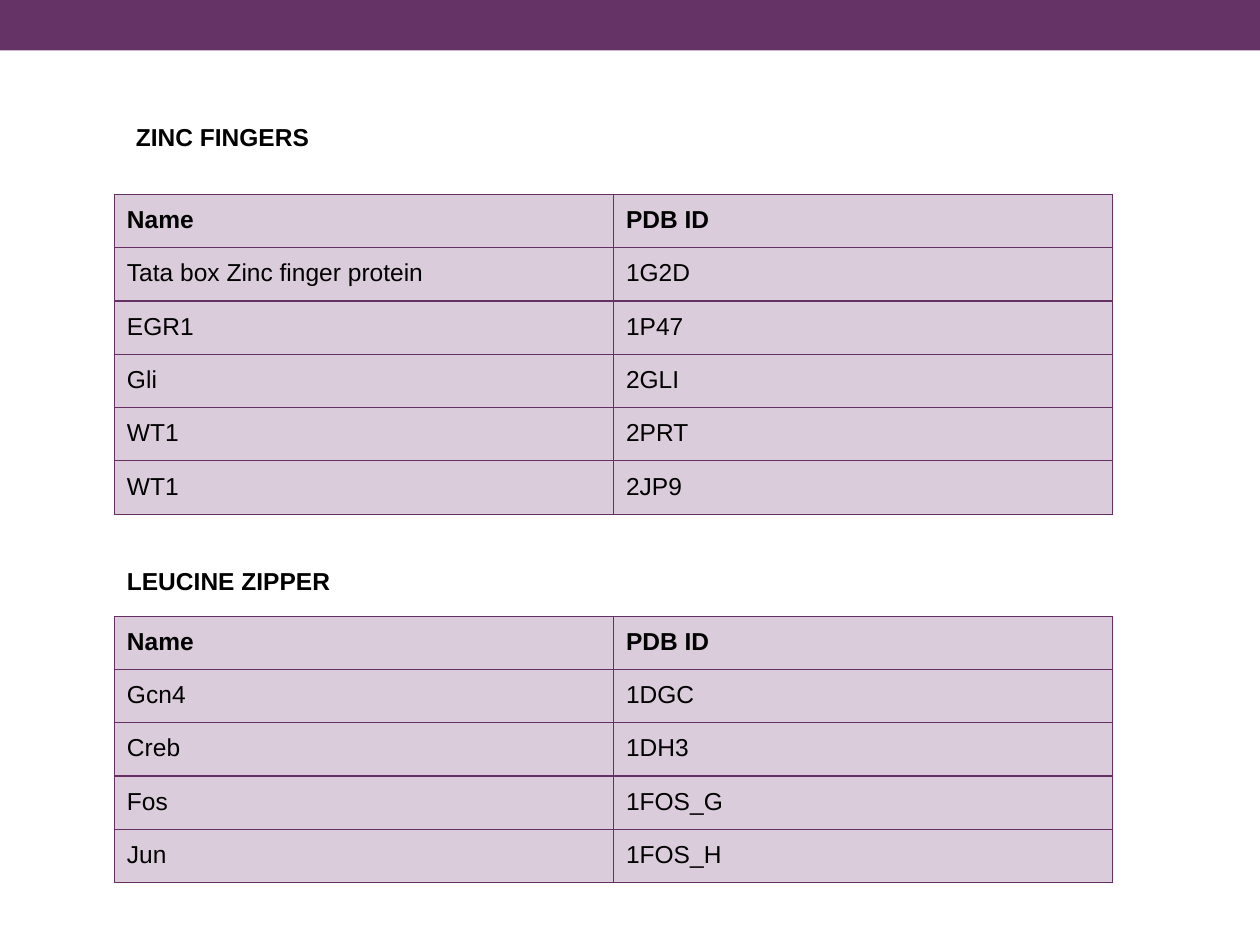
"""Build a slide with two tables of DNA-binding proteins and their PDB IDs."""
from lxml.etree import SubElement
from pptx import Presentation
from pptx.dml.color import RGBColor
from pptx.enum.shapes import MSO_SHAPE as SHAPE
from pptx.enum.text import MSO_ANCHOR as ANCHOR
from pptx.oxml.ns import qn
from pptx.util import Cm, Pt

PURPLE = RGBColor(0x66, 0x33, 0x66)
BORDER = RGBColor(0x65, 0x31, 0x65)
LILAC = RGBColor(0xDA, 0xCC, 0xDA)
BLACK = RGBColor(0, 0, 0)

LEFT, COL_W, ROW_H = 2.31, 10.06, 1.06
HEADER = ("Name", "PDB ID")
SECTIONS = [
    ("ZINC FINGERS", 2.49, 2.34, 3.92, [
        ("Tata box Zinc finger protein", "1G2D"),
        ("EGR1", "1P47"),
        ("Gli", "2GLI"),
        ("WT1", "2PRT"),
        ("WT1", "2JP9"),
    ]),
    ("LEUCINE ZIPPER", 2.31, 11.28, 12.42, [
        ("Gcn4", "1DGC"),
        ("Creb", "1DH3"),
        ("Fos", "1FOS_G"),
        ("Jun", "1FOS_H"),
    ]),
]


def write(tf, text, bold):
    p = tf.paragraphs[0]
    p.text = text
    p.font.name = "Arial"
    p.font.size = Pt(14)
    p.font.bold = bold
    p.font.color.rgb = BLACK


def add_borders(cell):
    tc_pr = cell._tc.get_or_add_tcPr()
    for side in ("lnL", "lnR", "lnT", "lnB"):
        ln = SubElement(tc_pr, qn(f"a:{side}"), w=str(Pt(0.75)))
        fill = SubElement(ln, qn("a:solidFill"))
        SubElement(fill, qn("a:srgbClr"), val=str(BORDER))


prs = Presentation()
prs.slide_width, prs.slide_height = Cm(25.4), Cm(19.05)
s = prs.slides.add_slide(prs.slide_layouts[6])

band = s.shapes.add_shape(SHAPE.RECTANGLE, 0, 0, prs.slide_width, Cm(1.02))
band.shadow.inherit = False
band.fill.solid()
band.fill.fore_color.rgb = PURPLE
band.line.fill.background()

for heading, heading_x, heading_y, table_y, proteins in SECTIONS:
    box = s.shapes.add_textbox(Cm(heading_x), Cm(heading_y), Cm(9), Cm(0.86))
    box.text_frame.word_wrap = True
    write(box.text_frame, heading, True)

    rows = [HEADER, *proteins]
    table = s.shapes.add_table(len(rows), 2, Cm(LEFT), Cm(table_y),
                               Cm(2 * COL_W), Cm(ROW_H * len(rows))).table
    table.horz_banding = False
    for col in table.columns:
        col.width = Cm(COL_W)
    for i, values in enumerate(rows):
        table.rows[i].height = Cm(ROW_H)
        for j, value in enumerate(values):
            cell = table.cell(i, j)
            cell.margin_left = cell.margin_right = Cm(0.25)
            cell.margin_top = cell.margin_bottom = Cm(0.24)
            cell.vertical_anchor = ANCHOR.TOP
            write(cell.text_frame, value, i == 0)
            add_borders(cell)
            cell.fill.solid()
            cell.fill.fore_color.rgb = LILAC

prs.save("out.pptx")
